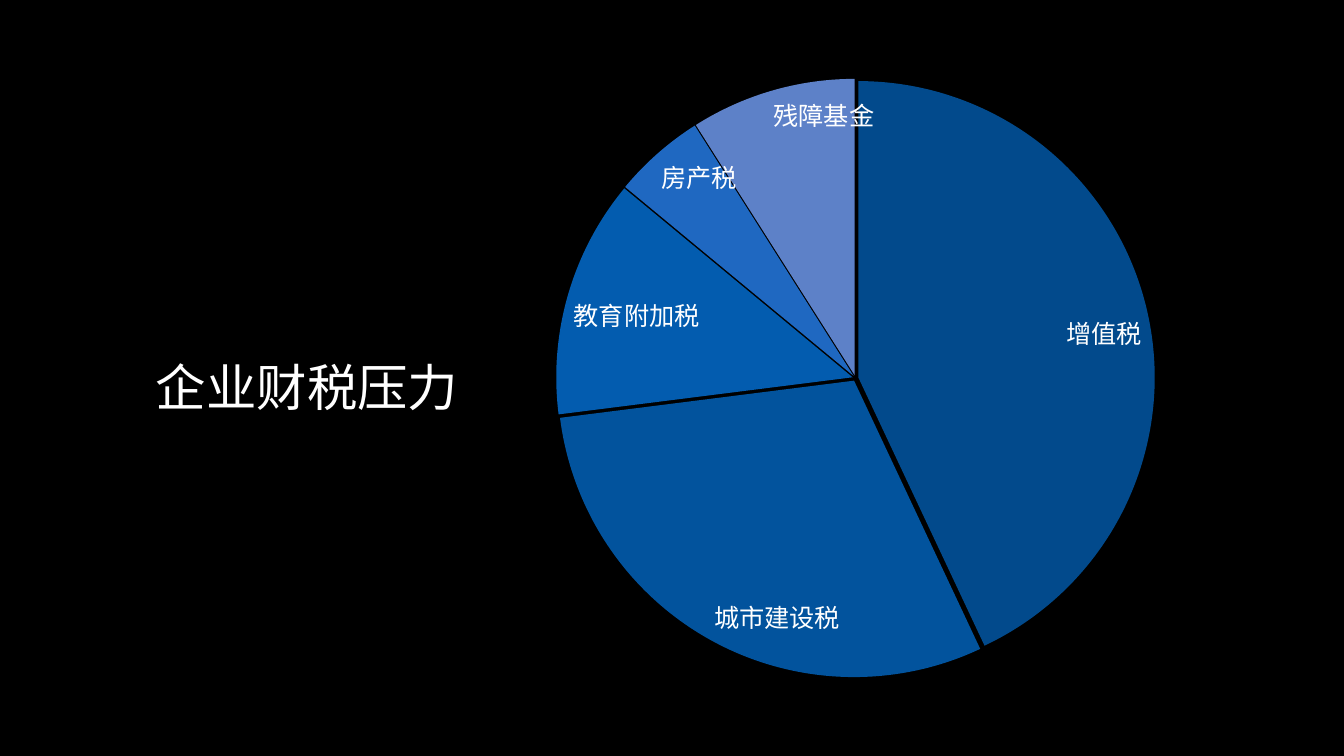
"""Build the slide on corporate tax pressure with its pie chart."""
from dataclasses import dataclass

from lxml.etree import SubElement
from pptx import Presentation
from pptx.chart.data import CategoryChartData
from pptx.dml.color import RGBColor
from pptx.dml.fill import FillFormat
from pptx.enum.chart import XL_CHART_TYPE, XL_LABEL_POSITION
from pptx.enum.text import MSO_ANCHOR, MSO_AUTO_SIZE
from pptx.oxml import parse_xml
from pptx.oxml.ns import nsdecls, qn
from pptx.slide import Slide
from pptx.text.text import Font
from pptx.util import Cm, Pt

CHINESE_FONT = "Noto Sans CJK SC"
WHITE = "FFFFFF"


@dataclass(frozen=True)
class Tax:
    name: str
    share: int
    color: str


TAXES = [
    Tax("增值税", 43, "024A8C"),
    Tax("城市建设税", 30, "02539D"),
    Tax("教育附加税", 13, "035CAF"),
    Tax("房产税", 5, "1F68C1"),
    Tax("残障基金", 9, "5D81C8"),
]


def rgb(color: str) -> RGBColor:
    return RGBColor.from_string(color)


def paint(fill: FillFormat, color: str) -> None:
    fill.solid()
    fill.fore_color.rgb = rgb(color)


def style_font(font: Font, size: int, name: str) -> None:
    font.size = Pt(size)
    font.name = name
    font.color.rgb = rgb(WHITE)


def add_tax_pie(slide: Slide) -> None:
    data = CategoryChartData()
    data.categories = [tax.name for tax in TAXES]
    data.add_series("Series 1", [tax.share for tax in TAXES])
    chart = slide.shapes.add_chart(
        XL_CHART_TYPE.PIE, Cm(13.94), Cm(1.91), Cm(15.24), Cm(15.24), data
    ).chart
    chart.has_title = False
    chart.has_legend = False
    style_font(chart.font, 10, CHINESE_FONT)

    plot = chart.plots[0]
    plot.vary_by_categories = True
    series = plot.series[0]
    paint(series.format.fill, TAXES[0].color)
    explosion = parse_xml(f'<c:explosion {nsdecls("c")} val="1"/>')
    series.format.fill
    series._element.find(qn("c:spPr")).addnext(explosion)
    for index, tax in enumerate(TAXES):
        paint(series.points[index].format.fill, tax.color)

    labels = series.data_labels
    labels.show_category_name = True
    labels.show_value = False
    labels.show_percentage = False
    labels.number_format = "0%"
    labels.number_format_is_linked = False
    labels.position = XL_LABEL_POSITION.INSIDE_END
    style_font(labels.font, 18, "Roboto")
    set_plot_layout(chart._chartSpace.chart.plotArea)


def set_plot_layout(plot_area) -> None:
    for layout in plot_area.findall(qn("c:layout")):
        plot_area.remove(layout)
    layout = parse_xml(f'<c:layout {nsdecls("c")}><c:manualLayout/></c:layout>')
    settings = {
        "layoutTarget": "inner", "xMode": "edge", "yMode": "edge",
        "x": "0.005", "y": "0.005", "w": "0.99", "h": "0.99",
    }
    for tag, value in settings.items():
        SubElement(layout[0], qn(f"c:{tag}")).set("val", value)
    plot_area.insert(0, layout)


def add_heading(slide: Slide, text: str) -> None:
    text_frame = slide.shapes.add_textbox(
        Cm(3.78), Cm(8.74), Cm(7.95), Cm(1.55)
    ).text_frame
    text_frame.word_wrap = False
    text_frame.auto_size = MSO_AUTO_SIZE.SHAPE_TO_FIT_TEXT
    text_frame.vertical_anchor = MSO_ANCHOR.MIDDLE
    for side in ("left", "top", "right", "bottom"):
        setattr(text_frame, f"margin_{side}", Cm(0.15))
    paragraph = text_frame.paragraphs[0]
    paragraph.line_spacing = 1.3
    run = paragraph.add_run()
    run.text = text
    style_font(run.font, 36, CHINESE_FONT)
    SubElement(run.font._element, qn("a:ea")).set("typeface", CHINESE_FONT)


def main() -> None:
    presentation = Presentation()
    presentation.slide_width = Cm(33.87)
    presentation.slide_height = Cm(19.05)
    slide = presentation.slides.add_slide(presentation.slide_layouts[6])
    paint(slide.background.fill, "000000")
    add_tax_pie(slide)
    add_heading(slide, "企业财税压力")
    presentation.save("out.pptx")


if __name__ == "__main__":
    main()
